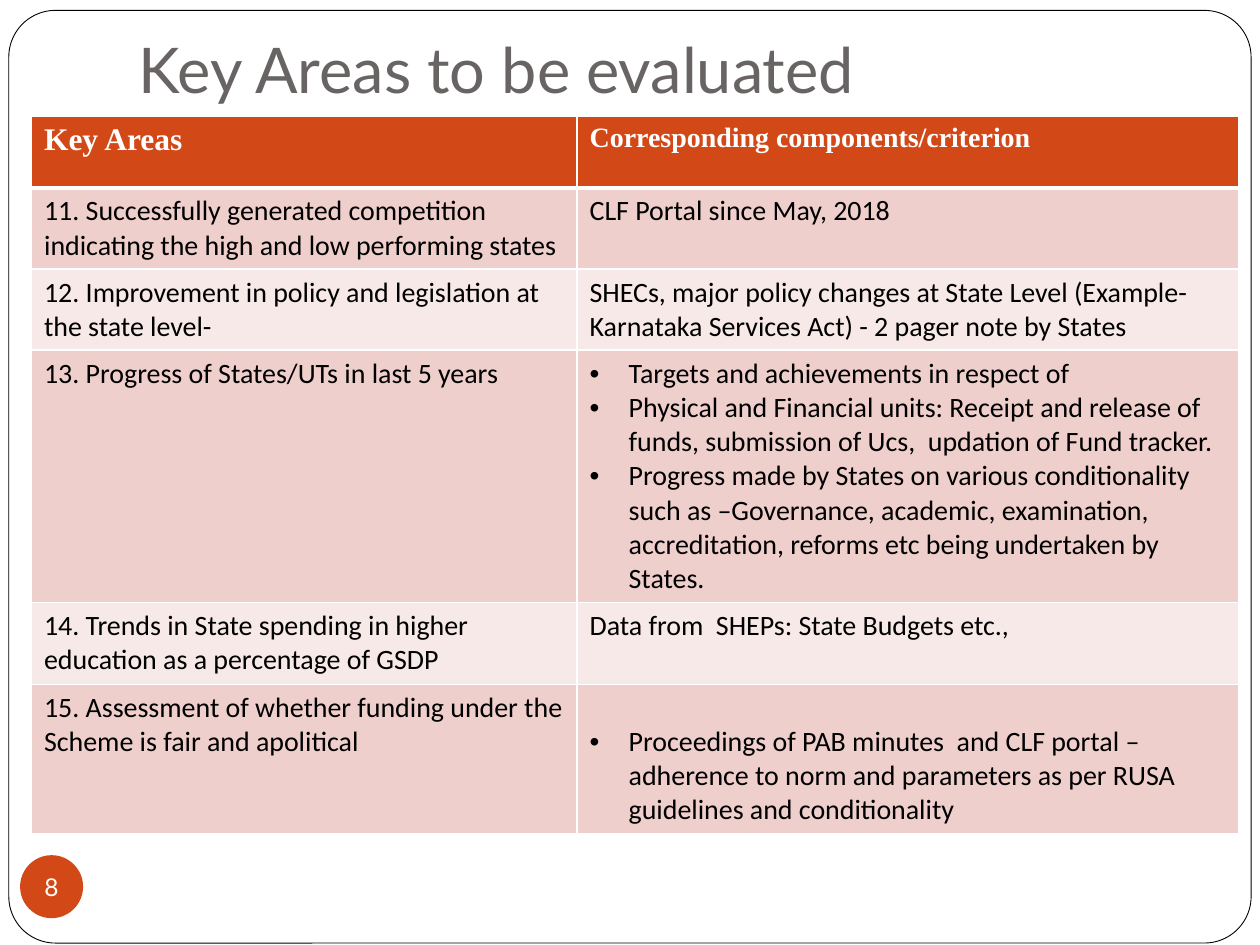
from lxml.etree import SubElement
from pptx import Presentation
from pptx.dml.color import RGBColor
from pptx.enum.shapes import MSO_SHAPE as Shape
from pptx.enum.text import MSO_ANCHOR as Anchor, MSO_AUTO_SIZE as AutoSize, PP_ALIGN as Align
from pptx.oxml.ns import qn
from pptx.util import Emu, Inches, Pt

WIDTH, HEIGHT = Inches(10), Inches(7.5)
WHITE, BLACK, GREY, ORANGE = "FFFFFF", "000000", "696464", "D34817"
BANDS = ("EFCFCC", "F7E9E8")
LINE_HEIGHT = 0.27  # one 16 pt line, in inches

HEADINGS = [("Key Areas", 18), ("Corresponding components/criterion", 16)]

# Plain text is a paragraph; a list is bulleted
AREAS = [
    ("11. Successfully generated competition indicating the high and low performing states",
     "CLF Portal since May, 2018"),
    ("12. Improvement in policy and legislation at the state level-",
     "SHECs, major policy changes at State Level (Example-Karnataka Services Act)"
     " - 2 pager note by States"),
    ("13. Progress of States/UTs in last 5 years",
     ["Targets and achievements in respect of",
      "Physical and Financial units: Receipt and release of funds, submission of Ucs,"
      "  updation of Fund tracker.",
      "Progress made by States on various conditionality such as –Governance, academic,"
      " examination, accreditation, reforms etc being undertaken by States."]),
    ("14. Trends in State spending in higher education as a percentage of GSDP",
     "Data from  SHEPs: State Budgets etc.,"),
    ("15. Assessment of whether funding under the Scheme is fair and apolitical",
     ["Proceedings of PAB minutes  and CLF portal – adherence to norm and parameters"
      " as per RUSA guidelines and conditionality"]),
]
COLUMN_WIDTHS = (4.33, 5.25)
ROW_HEIGHTS = (0.57, 0.64, 0.64, 2.0, 0.65, 1.18)


def rgb(color):
    return RGBColor.from_string(color)


def share(left, top, width, height):
    """Turn shares of the slide's size into a position and a size."""
    return [Emu(round(part * full))
            for part, full in zip((left, top, width, height), (WIDTH, HEIGHT) * 2)]


class SlideBuilder:
    display_font, body_font, heading_font = "Lato", "Calibri", "Times New Roman"

    def __init__(self, slide):
        self.slide = slide

    def style(self, paragraph, font, size, color, bold=False):
        for run in paragraph.runs:
            run.font.name, run.font.size, run.font.bold = font, Pt(size), bold
            run.font.color.rgb = rgb(color)

    def title(self, text, box):
        title = self.slide.shapes.title
        title.left, title.top, title.width, title.height = box
        frame = title.text_frame
        frame.text = text
        frame.auto_size, frame.vertical_anchor = AutoSize.NONE, Anchor.BOTTOM
        frame.margin_top, frame.margin_bottom = Inches(0.05), Inches(0.71)
        frame.paragraphs[0].alignment = Align.LEFT
        self.style(frame.paragraphs[0], self.display_font, 36, GREY)

    def shape(self, kind, box, fill, line=None):
        shape = self.slide.shapes.add_shape(kind, *box)
        shape.shadow.inherit = False
        shape.fill.solid()
        shape.fill.fore_color.rgb = rgb(fill)
        if line:
            shape.line.color.rgb, shape.line.width = rgb(line), Pt(0.5)
        else:
            shape.line.fill.background()
        return shape

    def page_frame(self, box):
        border = self.shape(Shape.ROUNDED_RECTANGLE, box, WHITE, BLACK)
        border.adjustments[0] = 0.05
        self.slide.shapes.title.element.addprevious(border.element)

    def page_number(self, number, box):
        frame = self.shape(Shape.OVAL, box, ORANGE).text_frame
        frame.text = str(number)
        frame.word_wrap, frame.vertical_anchor = False, Anchor.MIDDLE
        frame.margin_left = frame.margin_right = frame.margin_top = frame.margin_bottom = 0
        frame.paragraphs[0].alignment = Align.CENTER
        self.style(frame.paragraphs[0], self.display_font, 14, WHITE)

    def bullet(self, paragraph):
        indent = Inches(0.31)
        properties = paragraph._p.get_or_add_pPr()
        properties.set("marL", str(indent))
        properties.set("indent", str(-indent))
        SubElement(properties, qn("a:buFont"), typeface="Arial")
        SubElement(properties, qn("a:buChar"), char="•")

    def cell_look(self, cell, fill, edges):
        properties = cell._tc.get_or_add_tcPr()
        for side, points in edges.items():
            edge = SubElement(properties, qn(f"a:ln{side}"), w=str(Pt(points)))
            SubElement(SubElement(edge, qn("a:solidFill")), qn("a:srgbClr"), val=WHITE)
        cell.fill.solid()
        cell.fill.fore_color.rgb = rgb(fill)

    def table(self, box, headings, areas):
        table = self.slide.shapes.add_table(len(areas) + 1, len(headings), *box).table
        for column, width in zip(table.columns, COLUMN_WIDTHS):
            column.width = Inches(width)
        for row, height in zip(table.rows, ROW_HEIGHTS):
            row.height = Inches(height)

        # Header row
        for index, (heading, size) in enumerate(headings):
            cell = table.cell(0, index)
            cell.text_frame.text = heading
            self.style(cell.text_frame.paragraphs[0], self.heading_font, size, WHITE, True)
            self.cell_look(cell, ORANGE, {"L": 1, "R": 1, "T": 1, "B": 3})

        # Banded body rows
        for row, area in enumerate(areas, start=1):
            edges = {"L": 1, "R": 1, "T": 3 if row == 1 else 1, "B": 1}
            for index, content in enumerate(area):
                cell = table.cell(row, index)
                bulleted = isinstance(content, list)
                cell.text_frame.text = "\n".join(content) if bulleted else content
                for paragraph in cell.text_frame.paragraphs:
                    self.style(paragraph, self.body_font, 16, BLACK)
                    if bulleted:
                        self.bullet(paragraph)
                self.cell_look(cell, BANDS[(row - 1) % 2], edges)

        # The last criterion starts one line lower
        table.cell(len(areas), 1).margin_top = Inches(0.05 + LINE_HEIGHT)


def main():
    deck = Presentation()
    deck.slide_width, deck.slide_height = WIDTH, HEIGHT
    builder = SlideBuilder(deck.slides.add_slide(deck.slide_layouts[5]))
    builder.page_frame(share(0.007, 0.011, 0.986, 0.987))
    builder.title("Key Areas to be evaluated", share(0.1, 0.04, 0.85, 1 / 6))
    builder.table(share(0.025, 0.123, 0.958, 0.757), HEADINGS, AREAS)
    builder.page_number(8, share(0.016, 0.905, 0.05, 1 / 15))
    deck.save("out.pptx")


if __name__ == "__main__":
    main()
